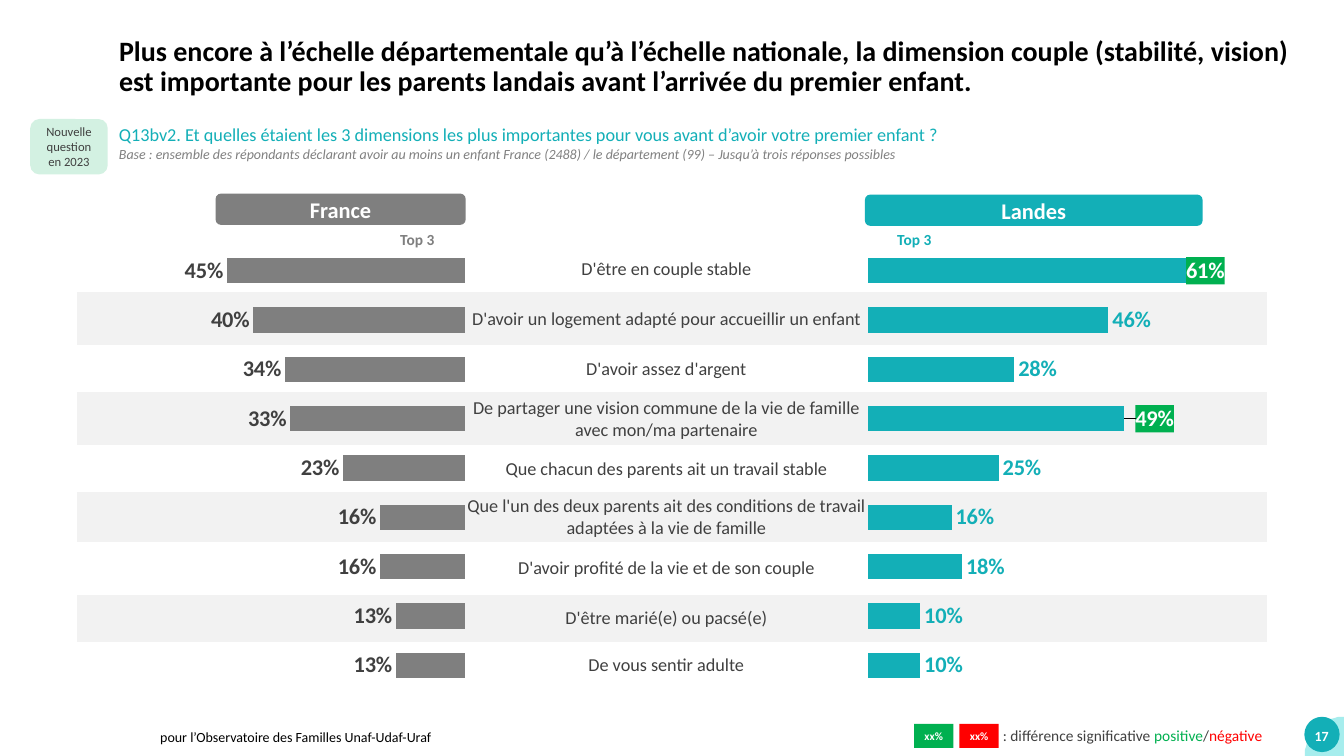
import math
from dataclasses import dataclass

from lxml import etree
from pptx import Presentation
from pptx.chart.data import CategoryChartData
from pptx.dml.color import RGBColor
from pptx.enum.chart import XL_CHART_TYPE, XL_LABEL_POSITION
from pptx.enum.shapes import MSO_SHAPE
from pptx.enum.text import MSO_ANCHOR, PP_ALIGN
from pptx.oxml import parse_xml
from pptx.util import Pt

BAR, OUTSIDE = XL_CHART_TYPE.BAR_CLUSTERED, XL_LABEL_POSITION.OUTSIDE_END
RECT, ROUND, OVAL = MSO_SHAPE.RECTANGLE, MSO_SHAPE.ROUNDED_RECTANGLE, MSO_SHAPE.OVAL
LEFT, CENTER = PP_ALIGN.LEFT, PP_ALIGN.CENTER
TOP, MIDDLE = MSO_ANCHOR.TOP, MSO_ANCHOR.MIDDLE
CHART_NS = "http://schemas.openxmlformats.org/drawingml/2006/chart"
CHART15_NS = "http://schemas.microsoft.com/office/drawing/2012/chart"
DRAW_NS = "http://schemas.openxmlformats.org/drawingml/2006/main"
NO_GRID_STYLE = "{2D5ABB26-0587-4C30-8999-92F81FD0307C}"
NO_LEADER_LINES = (f'<c:extLst xmlns:c="{CHART_NS}"><c:ext uri="{{CE6537A1-D6FC-4f65-9D91-7224C49458BB}}" '
                   f'xmlns:c15="{CHART15_NS}"><c15:showLeaderLines val="0"/></c:ext></c:extLst>')

TITLE = ("Plus encore à l’échelle départementale qu’à l’échelle nationale, la dimension couple "
         "(stabilité, vision) est importante pour les parents landais avant l’arrivée du premier enfant.")
QUESTION = ("Q13bv2. Et quelles étaient les 3 dimensions les plus importantes pour vous "
            "avant d’avoir votre premier enfant ?")
BASE = ("Base : ensemble des répondants déclarant avoir au moins un enfant France (2488) / "
        "le département (99) – Jusqu’à trois réponses possibles")
BADGE = "Nouvelle question en 2023"
FOOTER = "pour l’Observatoire des Familles Unaf-Udaf-Uraf"
# dimension, France, Landes, row height
DIMENSIONS = [
    ("D'être en couple stable", 0.45, 0.61, 33.6),
    ("D'avoir un logement adapté pour accueillir un enfant", 0.40, 0.46, 37.9),
    ("D'avoir assez d'argent", 0.34, 0.28, 33.6),
    ("De partager une vision commune de la vie de famille avec mon/ma partenaire", 0.33, 0.49, 37.9),
    ("Que chacun des parents ait un travail stable", 0.23, 0.25, 33.6),
    ("Que l'un des deux parents ait des conditions de travail adaptées à la vie de famille",
     0.16, 0.16, 35.3),
    ("D'avoir profité de la vie et de son couple", 0.16, 0.18, 37.9),
    ("D'être marié(e) ou pacsé(e)", 0.13, 0.10, 33.6),
    ("De vous sentir adulte", 0.13, 0.10, 33.6),
]
SIGNIFICANT = {0: -0.01, 3: 0.015}  # row: sideways shift of its label
COLUMN_WIDTHS = (271.4, 299.5, 279.4)


@dataclass(frozen=True)
class Theme:
    font: str = "Calibri"
    black: str = "000000"
    white: str = "FFFFFF"
    dark: str = "404040"
    grey: str = "7F7F7F"
    pale: str = "808080"
    teal: str = "13AFB7"
    aqua: str = "A6EDED"
    mint: str = "D3F1E2"
    band: str = "F2F2F2"
    green: str = "00B050"
    red: str = "FF0000"
    title: int = 20
    heading: int = 16
    body: int = 13
    small: int = 11
    note: int = 10
    badge: int = 9
    key: int = 8


THEME = Theme()


def style(font, size, color, bold=False, italic=False):
    font.name, font.size, font.bold, font.italic = THEME.font, Pt(size), bold, italic
    font.color.rgb = RGBColor.from_string(color)


def paint(shape, color):
    shape.shadow.inherit = False
    shape.fill.solid()
    shape.fill.fore_color.rgb = RGBColor.from_string(color)
    shape.line.fill.background()


def write(shape, text, size, color, bold=False, align=CENTER, anchor=MIDDLE, wrap=True, side=7.2):
    frame = shape.text_frame
    frame.word_wrap, frame.vertical_anchor = wrap, anchor
    frame.margin_left = frame.margin_right = Pt(side)
    frame.text = text
    para = frame.paragraphs[0]
    para.alignment = align
    style(para.runs[0].font, size, color, bold)
    return frame


def add_text(page, box, *args, **options):
    return write(page.shapes.add_textbox(*map(Pt, box)), *args, **options)


def add_block(page, kind, box, fill):
    shape = page.shapes.add_shape(kind, *map(Pt, box))
    paint(shape, fill)
    return shape


def add_dimensions(page):
    heights = [row[3] for row in DIMENSIONS]
    frame = page.shapes.add_table(len(DIMENSIONS), 3, Pt(54.7), Pt(175),
                                  Pt(sum(COLUMN_WIDTHS)), Pt(sum(heights)))
    table = frame.table
    table.first_row = table.horz_banding = False
    table._tbl.tblPr.find(f"{{{DRAW_NS}}}tableStyleId").text = NO_GRID_STYLE
    for column, width in zip(table.columns, COLUMN_WIDTHS):
        column.width = Pt(width)
    for index, (label, _, _, height) in enumerate(DIMENSIONS):
        table.rows[index].height = Pt(height)
        for cell in table.rows[index].cells:
            if index % 2:
                cell.fill.solid()
                cell.fill.fore_color.rgb = RGBColor.from_string(THEME.band)
            else:
                cell.fill.background()
        cell = table.cell(index, 1)
        cell.margin_left = cell.margin_right = cell.margin_top = Pt(0.7)
        cell.margin_bottom = 0
        cell.vertical_anchor = MIDDLE
        cell.text = label
        para = cell.text_frame.paragraphs[0]
        para.alignment = CENTER
        style(para.runs[0].font, THEME.body, THEME.dark)


def layout_xml(**places):
    """Manual layout element; each place becomes one child, in the given order."""
    parts = "".join(f'<c:{name} val="{value}"/>' for name, value in places.items())
    return parse_xml(f'<c:layout xmlns:c="{CHART_NS}"><c:manualLayout>{parts}'
                     '</c:manualLayout></c:layout>')


def add_bars(page, box, values, limits, color, label_color, plot_x):
    data = CategoryChartData(number_format="0%")
    data.categories = [str(number) for number in range(1, len(values) + 1)]
    data.add_series("Series 1", values)
    chart = page.shapes.add_chart(BAR, *map(Pt, box), data).chart
    chart.has_legend = chart.has_title = False
    style(chart.font, THEME.heading, label_color, True)
    chart.category_axis.reverse_order = True
    chart.category_axis.visible = chart.value_axis.visible = False
    chart.value_axis.has_major_gridlines = False
    chart.value_axis.minimum_scale, chart.value_axis.maximum_scale = limits
    chart.value_axis.major_unit = 0.2
    plot = chart.plots[0]
    plot.gap_width, plot.overlap, plot.vary_by_categories = 95, -9, False
    series = plot.series[0]
    series.invert_if_negative = False
    series.format.fill.solid()
    series.format.fill.fore_color.rgb = RGBColor.from_string(color)
    labels = series.data_labels
    labels.show_value, labels.position = True, OUTSIDE
    labels.number_format, labels.number_format_is_linked = "0%;0%", False
    style(labels.font, THEME.heading, label_color, True)
    labels._element.append(parse_xml(NO_LEADER_LINES))
    area = chart._chartSpace.chart.plotArea
    for old in area.findall(f"{{{CHART_NS}}}layout"):
        area.remove(old)
    area.insert(0, layout_xml(layoutTarget="inner", xMode="edge", yMode="edge",
                              x=plot_x, y=0.016, w=1 - plot_x, h=0.973))
    return series


def highlight(series, index, shift):
    """Give one data label a green fill, white text and a sideways shift."""
    label = series.points[index].data_label
    style(label.font, THEME.heading, THEME.white, True)
    label.position = OUTSIDE
    element = label._get_or_add_dLbl()
    element[0].addnext(layout_xml(x=shift, y=0))
    text = element.find(f"{{{CHART_NS}}}txPr")
    number = etree.Element(f"{{{CHART_NS}}}numFmt", formatCode="0%", sourceLinked="0")
    shape = etree.Element(f"{{{CHART_NS}}}spPr")
    fill = etree.SubElement(shape, f"{{{DRAW_NS}}}solidFill")
    etree.SubElement(fill, f"{{{DRAW_NS}}}srgbClr", val=THEME.green)
    text.addprevious(number)
    text.addprevious(shape)


def add_page_number(page):
    arc = [(960 - 28 * math.cos(step * math.pi / 24), 540 - 28 * math.sin(step * math.pi / 24))
           for step in range(13)]
    builder = page.shapes.build_freeform(960, 540, scale=Pt(1))
    builder.add_line_segments(arc)
    paint(builder.convert_to_shape(), THEME.aqua)
    add_block(page, OVAL, (931.7, 512, 25.2, 25.2), THEME.teal)
    add_text(page, (928, 515.5, 32, 20), "17", THEME.note, THEME.white, True, wrap=False)


def add_legend(page):
    for left, color in ((653, THEME.green), (685.4, THEME.red)):
        key = add_block(page, RECT, (left, 517, 28, 17.3), color)
        write(key, "xx%", THEME.key, THEME.white, True, side=0)
    frame = add_text(page, (709.2, 514.8, 216.7, 20.9), ": différence significative ",
                     THEME.small, THEME.dark, align=LEFT, anchor=TOP, wrap=False)
    for text, color in (("positive", THEME.green), ("/", THEME.dark), ("négative", THEME.red)):
        span = frame.paragraphs[0].add_run()
        span.text = text
        style(span.font, THEME.small, color)


def main():
    deck = Presentation()
    deck.slide_width, deck.slide_height = Pt(960), Pt(540)
    page = deck.slides.add_slide(deck.slide_layouts[5])
    title = page.shapes.title
    title.left, title.top, title.width, title.height = map(Pt, (82, 18, 864, 60.5))
    write(title, TITLE, THEME.title, THEME.black, True, LEFT, side=3)
    title.text_frame.paragraphs[0].line_spacing = 0.9
    add_text(page, (114.5, 517, 381.6, 18.7), FOOTER, THEME.note, THEME.black, align=LEFT, side=0)
    add_page_number(page)
    add_dimensions(page)
    add_bars(page, (0, 170.6, 332, 326), [-row[1] for row in DIMENSIONS], (-0.88, 0),
             THEME.grey, THEME.dark, 0)
    landes = add_bars(page, (610.6, 170.6, 345.6, 326), [row[2] for row in DIMENSIONS], (0, 0.9),
                      THEME.teal, THEME.teal, 0.027)
    for index, shift in SIGNIFICANT.items():
        highlight(landes, index, shift)
    for name, box, top_left, color in (("France", (154, 138.3, 178.6, 22.3), 266.4, THEME.grey),
                                       ("Landes", (617.8, 139, 241.2, 22.3), 621.4, THEME.teal)):
        write(add_block(page, ROUND, box, color), name, THEME.heading, THEME.white, True)
        add_text(page, (top_left, 161, 63.4, 20.9), "Top 3", THEME.small, color, True, anchor=TOP)
    frame = add_text(page, (82, 84.7, 818.6, 36), QUESTION, THEME.body, THEME.teal,
                     align=LEFT, anchor=TOP, side=3)
    para = frame.add_paragraph()
    para.text = BASE
    style(para.runs[0].font, THEME.note, THEME.pale, italic=True)
    write(add_block(page, ROUND, (21.6, 85, 55.4, 39.6), THEME.mint), BADGE, THEME.badge, THEME.dark)
    add_legend(page)
    deck.save("out.pptx")


if __name__ == "__main__":
    main()
